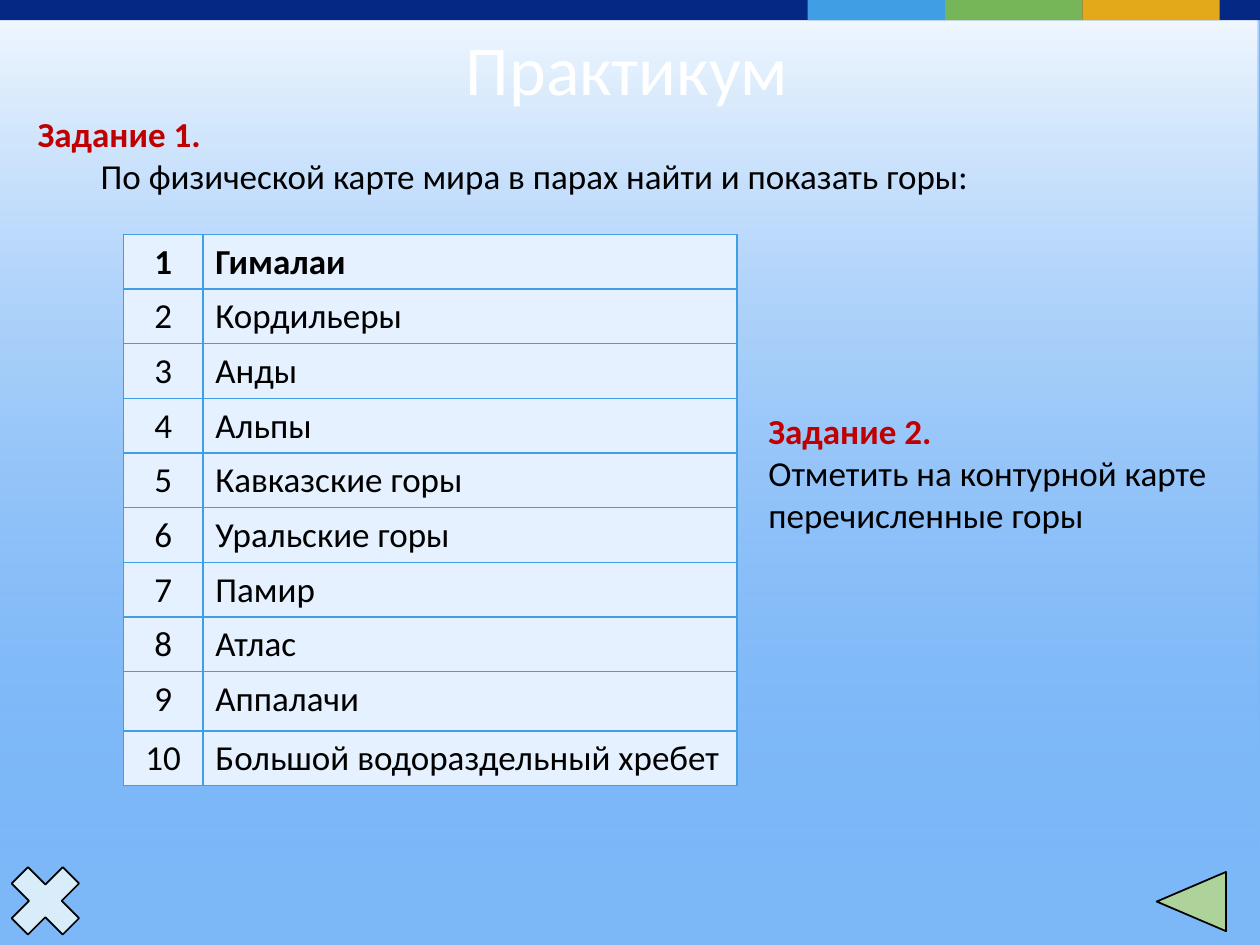
from lxml import etree
from pptx import Presentation
from pptx.dml.color import RGBColor
from pptx.enum.shapes import MSO_SHAPE
from pptx.enum.text import PP_ALIGN
from pptx.oxml.ns import qn
from pptx.util import Inches, Pt

CENTER = PP_ALIGN.CENTER
LEFT = PP_ALIGN.LEFT
RECTANGLE = MSO_SHAPE.RECTANGLE
CROSS = MSO_SHAPE.MATH_MULTIPLY
PENTAGON = MSO_SHAPE.PENTAGON

BLACK = RGBColor(0x00, 0x00, 0x00)
WHITE = RGBColor(0xFF, 0xFF, 0xFF)
RED = RGBColor(0xC0, 0x00, 0x00)
SKY = RGBColor(0x7C, 0xB7, 0xF8)
NAVY = RGBColor(0x04, 0x28, 0x84)
BLUE = RGBColor(0x3F, 0x9E, 0xE4)
GREEN = RGBColor(0x77, 0xB5, 0x59)
AMBER = RGBColor(0xE4, 0xA8, 0x1B)
PALE_BLUE = RGBColor(0xD9, 0xEC, 0xFA)
PALE_GREEN = RGBColor(0xAD, 0xD3, 0x9B)
CELL_BLUE = RGBColor(0xE5, 0xF1, 0xFE)

MOUNTAINS = [
    "Гималаи", "Кордильеры", "Анды", "Альпы", "Кавказские горы",
    "Уральские горы", "Памир", "Атлас", "Аппалачи",
    "Большой водораздельный хребет",
]


def write(paragraph, text, size=20, color=BLACK, bold=False, align=LEFT):
    paragraph.alignment = align
    run = paragraph.add_run()
    run.text = text
    run.font.name = "Calibri"
    run.font.size = Pt(size)
    run.font.bold = bold
    run.font.color.rgb = color


def add_shape(kind, left, top, width, height, fill, line=None):
    shape = slide.shapes.add_shape(
        kind, Inches(left), Inches(top), Inches(width), Inches(height))
    shape.shadow.inherit = False
    shape.fill.solid()
    shape.fill.fore_color.rgb = fill
    if line is None:
        shape.line.fill.background()
    else:
        shape.line.color.rgb = line
        shape.line.width = Pt(1)
    return shape


presentation = Presentation()
presentation.slide_width = Inches(10)
presentation.slide_height = Inches(7.5)
slide = presentation.slides.add_slide(presentation.slide_layouts[6])
slide.background.fill.solid()
slide.background.fill.fore_color.rgb = SKY

glow = add_shape(RECTANGLE, -0.01, 0, 10, 6.88, SKY)
glow.fill.gradient()
glow.fill.gradient_angle = 90
for stop, position, color in zip(glow.fill.gradient_stops, (0.01, 1), (SKY, WHITE)):
    stop.position = position
    stop.color.rgb = color
for color_element, alpha in zip(glow._element.spPr.iter(qn("a:srgbClr")), (0, 92000)):
    etree.SubElement(color_element, qn("a:alpha"), val=str(alpha))

add_shape(RECTANGLE, 0, 0, 10, 0.16, NAVY)
for index, color in enumerate((BLUE, GREEN, AMBER)):
    add_shape(RECTANGLE, 6.41 + index * 1.09, 0, 1.09, 0.16, color)

title = slide.shapes.add_textbox(Inches(0.5), Inches(0.15), Inches(8.95), Inches(0.78))
title.text_frame.word_wrap = True
write(title.text_frame.paragraphs[0], "Практикум", size=40, color=WHITE, align=CENTER)

add_shape(CROSS, -0.03, 6.76, 0.78, 0.78, PALE_BLUE, BLACK)

table_frame = slide.shapes.add_table(
    len(MOUNTAINS), 2, Inches(0.98), Inches(1.86), Inches(4.87), Inches(4.16))
table = table_frame.table
table.columns[0].width = Inches(0.63)
table.columns[1].width = Inches(4.24)
for index, mountain in enumerate(MOUNTAINS):
    table.rows[index].height = Inches(0.47 if mountain == "Аппалачи" else 0.41)
    for column, (text, align) in enumerate(((str(index + 1), CENTER), (mountain, LEFT))):
        cell = table.cell(index, column)
        write(cell.text_frame.paragraphs[0], text, bold=index == 0, align=align)
        cell.fill.solid()
        cell.fill.fore_color.rgb = CELL_BLUE
        properties = cell._tc.get_or_add_tcPr()
        for position, side in enumerate(("a:lnL", "a:lnR", "a:lnT", "a:lnB")):
            border = etree.Element(qn(side), w=str(Pt(1)))
            border_fill = etree.SubElement(border, qn("a:solidFill"))
            etree.SubElement(border_fill, qn("a:srgbClr"), val=str(BLUE))
            properties.insert(position, border)

tasks = [
    ("Задание 1.", "По физической карте мира в парах найти и показать горы:",
     0.2, 0.84, 9.69, 0.77, 1),
    ("Задание 2.", "Отметить на контурной карте перечисленные горы",
     6, 3.2, 3.86, 1.11, 0),
]
for heading, instruction, left, top, width, height, level in tasks:
    task = slide.shapes.add_textbox(
        Inches(left), Inches(top), Inches(width), Inches(height))
    task.text_frame.word_wrap = True
    write(task.text_frame.paragraphs[0], heading, color=RED, bold=True)
    paragraph = task.text_frame.add_paragraph()
    paragraph.level = level
    paragraph._p.get_or_add_pPr().set("marL", str(Inches(0.5 * level)))
    write(paragraph, instruction)

back_arrow = add_shape(PENTAGON, 9.18, 6.92, 0.55, 0.47, PALE_GREEN, BLACK)
back_arrow.rotation = 180
back_arrow.adjustments[0] = 1.17

presentation.save("out.pptx")
